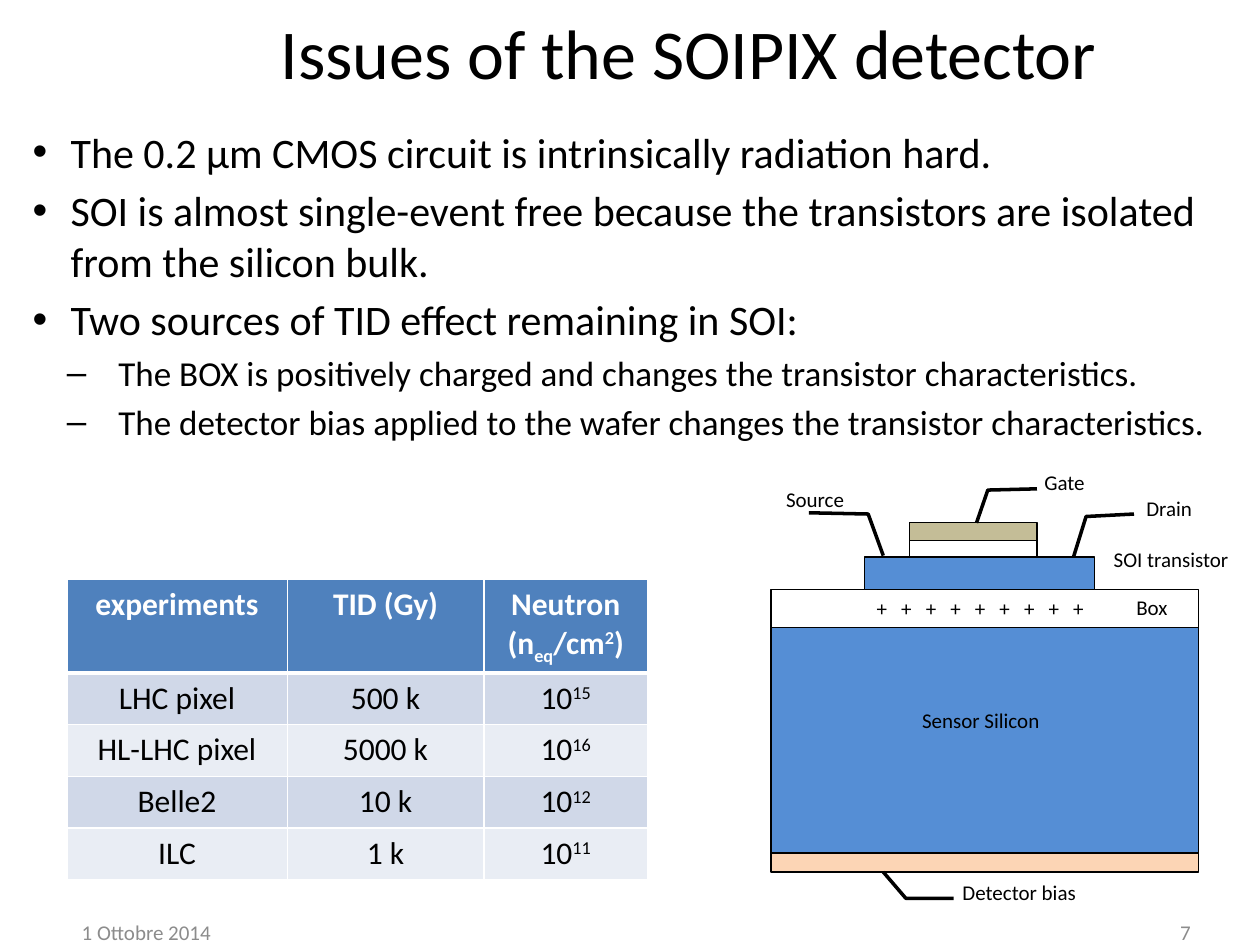
from lxml.etree import SubElement
from pptx import Presentation
from pptx.dml.color import RGBColor
from pptx.enum.shapes import MSO_SHAPE
from pptx.enum.text import MSO_ANCHOR, MSO_AUTO_SIZE, PP_ALIGN
from pptx.oxml.ns import qn
from pptx.util import Inches, Pt

THEME = {
    "font": "Calibri",
    "black": "000000", "white": "FFFFFF", "grey": "8C8C8C",
    "silicon": "558ED5", "gate": "C4BD97", "contact": "FCD5B5",
    "header": "4F81BD", "bands": ["D0D8E8", "E9EDF4"],
    "title": 40, "body": 24, "sub": 20, "table": 18, "label": 12,
}


def add_run(p, text, size, color="black", bold=False, **xml_attrs):
    r = p.add_run()
    r.text = text
    for name, value in {"name": THEME["font"], "size": Pt(THEME[size]), "bold": bold}.items():
        setattr(r.font, name, value)
    r.font.color.rgb = RGBColor.from_string(THEME[color])
    for name, value in xml_attrs.items():
        r._r.get_or_add_rPr().set(name, str(value))


def add_label(s, text, box, color="black", align=PP_ALIGN.LEFT, wrap=False,
              anchor=MSO_ANCHOR.TOP, **xml_attrs):
    tf = s.shapes.add_textbox(*[Inches(v) for v in box]).text_frame
    tf.word_wrap = wrap
    tf.vertical_anchor = anchor
    p = tf.paragraphs[0]
    p.alignment = align
    add_run(p, text, "label", color, **xml_attrs)


prs = Presentation()
prs.slide_width, prs.slide_height = Inches(10), Inches(7.5)
s = prs.slides.add_slide(prs.slide_layouts[1])

# Title and body placeholders
title, body = s.placeholders
for sp, box in [(title, (1.07, 0, 8.79, 0.82)), (body, (0.16, 0.95, 9.7, 2.89))]:
    sp.left, sp.top, sp.width, sp.height = [Inches(v) for v in box]
    sp.text_frame.auto_size = MSO_AUTO_SIZE.NONE
    sp.text_frame.word_wrap = True
title.text_frame.vertical_anchor = MSO_ANCHOR.MIDDLE
title.text_frame.paragraphs[0].alignment = PP_ALIGN.CENTER
add_run(title.text_frame.paragraphs[0], "Issues of the SOIPIX detector", "title")

# Bulleted list: size, left indent, hanging indent and bullet by level
LEVELS = [("body", 0.3, 0.3, "•"), ("sub", 0.68, 0.41, "–")]
points = [
    (0, "The 0.2 μm CMOS circuit is intrinsically radiation hard."),
    (0, "SOI is almost single-event free because the transistors are isolated "
        "from the silicon bulk."),
    (0, "Two sources of TID effect remaining in SOI:"),
    (1, "The BOX is positively charged and changes the transistor characteristics."),
    (1, "The detector bias applied to the wafer changes the transistor characteristics."),
]
tf = body.text_frame
for i, (level, text) in enumerate(points):
    size, left, hang, bullet = LEVELS[level]
    p = tf.paragraphs[0] if i == 0 else tf.add_paragraph()
    p.level = level
    pPr = p._p.get_or_add_pPr()
    pPr.set("marL", str(Inches(left)))
    pPr.set("indent", str(-Inches(hang)))
    SubElement(pPr, qn("a:buChar")).set("char", bullet)
    p.space_before = Pt(0.2 * THEME[size] if i else 0)
    add_run(p, text, size)

# Detector cross-section: layers
layers = [
    ((6.12, 4.68, 3.39, 0.3), None),
    ((6.12, 4.98, 3.39, 1.79), "silicon"),
    ((6.86, 4.42, 1.83, 0.26), "silicon"),
    ((7.22, 4.28, 1.01, 0.14), None),
    ((7.22, 4.15, 1.01, 0.14), "gate"),
    ((6.12, 6.77, 3.39, 0.15), "contact"),
]
for box, fill in layers:
    sp = s.shapes.add_shape(MSO_SHAPE.RECTANGLE, *[Inches(v) for v in box])
    sp.shadow.inherit = False
    if fill:
        sp.fill.solid()
        sp.fill.fore_color.rgb = RGBColor.from_string(THEME[fill])
    else:
        sp.fill.background()
    sp.line.color.rgb = RGBColor.from_string(THEME["black"])
    sp.line.width = Pt(0.75)

# Detector cross-section: leader lines
leaders = [
    [(7.01, 4.41), (6.89, 4.08), (6.42, 4.07)],
    [(8.52, 4.42), (8.62, 4.1), (9, 4.08)],
    [(7.75, 4.15), (7.84, 3.89), (8.23, 3.88)],
    [(7.01, 6.92), (7.19, 7.13), (7.57, 7.13)],
]
for leader in leaders:
    start, *rest = [(Inches(x), Inches(y)) for x, y in leader]
    builder = s.shapes.build_freeform(*start)
    builder.add_line_segments(rest, close=False)
    sp = builder.convert_to_shape()
    sp.shadow.inherit = False
    sp.fill.background()
    sp.line.color.rgb = RGBColor.from_string(THEME["black"])
    sp.line.width = Pt(2)

# Detector cross-section: labels
labels = [
    ("Gate", 8.19, 3.68, 0.53), ("Drain", 9, 3.88, 0.57), ("Source", 6.14, 3.81, 0.67),
    ("Box", 8.92, 4.67, 0.45), ("Sensor Silicon", 7.22, 5.57, 1.14),
    ("Detector bias", 7.54, 6.93, 1.11), ("SOI transistor", 8.74, 4.29, 1.12),
]
for text, x, y, width in labels:
    add_label(s, text, (x, y, width, 0.3))
# Trapped charges, spread out by letter spacing
add_label(s, " ".join("+" * 9), (6.86, 4.68, 1.87, 0.3), spc=270)

# Radiation table: each cell is a list of (text, baseline shift in percent)
rows = [[[("experiments", 0)], [("TID (Gy)", 0)],
         [("Neutron (n", 0), ("eq", -25), ("/cm", 0), ("2", 30), (")", 0)]]]
for name, dose, power in [("LHC pixel", "500 k", "15"), ("HL-LHC pixel", "5000 k", "16"),
                          ("Belle2", "10 k", "12"), ("ILC", "1 k", "11")]:
    rows.append([[(name, 0)], [(dose, 0)], [("10", 0), (power, 30)]])

widths, heights = [1.75, 1.56, 1.3], [0.73] + [0.41] * 4
table = s.shapes.add_table(len(rows), len(widths), Inches(0.53), Inches(4.6),
                           Inches(sum(widths)), Inches(sum(heights))).table
for col, width in zip(table.columns, widths):
    col.width = Inches(width)
for i, row in enumerate(rows):
    table.rows[i].height = Inches(heights[i])
    fill = THEME["bands"][(i - 1) % 2] if i else THEME["header"]
    for j, parts in enumerate(row):
        cell = table.cell(i, j)
        p = cell.text_frame.paragraphs[0]
        p.alignment = PP_ALIGN.CENTER
        for text, shift in parts:
            attrs = {"baseline": shift * 1000} if shift else {}
            add_run(p, text, "table", "black" if i else "white", bold=i == 0, **attrs)
        # Borders come before the fill in the cell properties
        tcPr = cell._tc.get_or_add_tcPr()
        for side in "LRTB":
            thick = (i, side) in [(0, "B"), (1, "T")]
            ln = SubElement(tcPr, qn(f"a:ln{side}"), w=str(Pt(3 if thick else 1)))
            SubElement(SubElement(ln, qn("a:solidFill")), qn("a:srgbClr"), val=THEME["white"])
        cell.fill.solid()
        cell.fill.fore_color.rgb = RGBColor.from_string(fill)

# Date and page number
for text, x, align in [("1 Ottobre 2014", 0.55, PP_ALIGN.LEFT), ("7", 7.22, PP_ALIGN.RIGHT)]:
    add_label(s, text, (x, 7.32, 2.33, 0.15), "grey", align, True, MSO_ANCHOR.MIDDLE)

prs.save("out.pptx")
